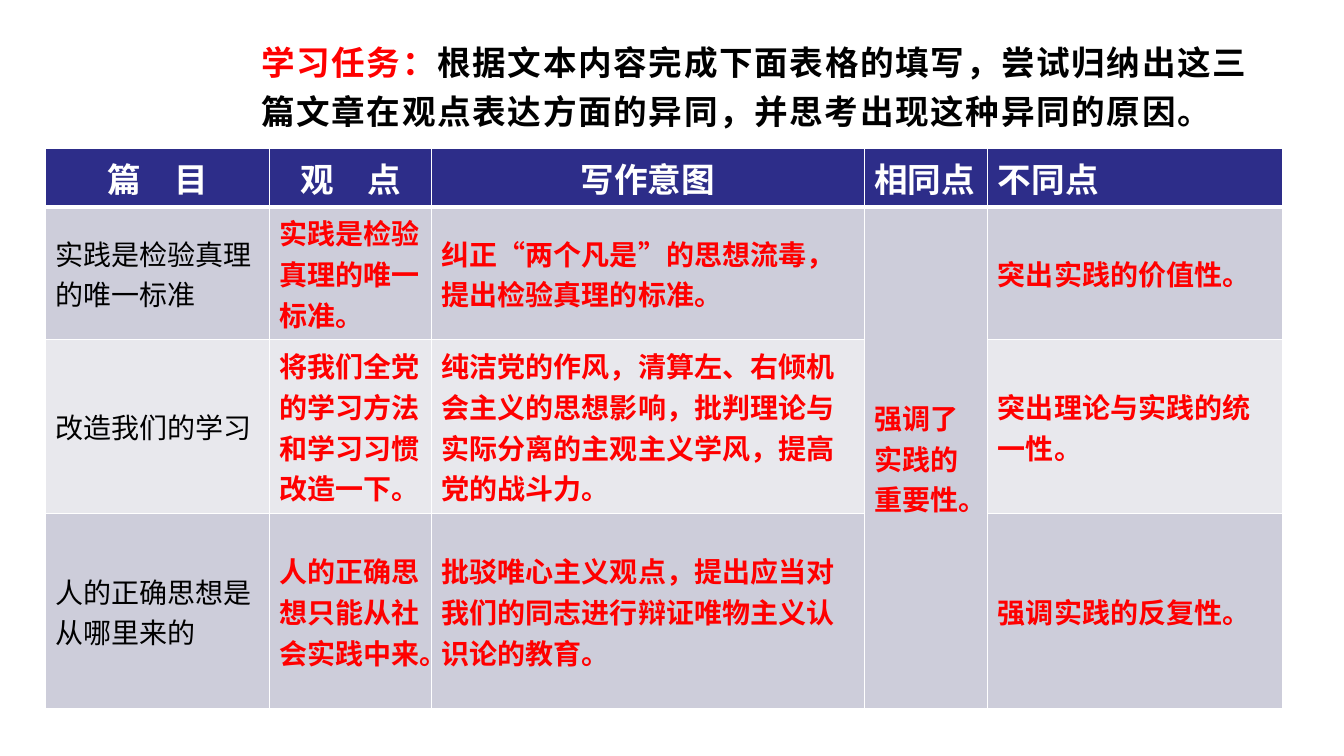
from lxml import etree
from pptx import Presentation
from pptx.dml.color import RGBColor
from pptx.enum.text import MSO_ANCHOR, MSO_AUTO_SIZE, PP_ALIGN
from pptx.oxml.ns import qn
from pptx.util import Cm, Pt

LEFT, CENTER = PP_ALIGN.LEFT, PP_ALIGN.CENTER
TOP, MIDDLE = MSO_ANCHOR.TOP, MSO_ANCHOR.MIDDLE
FIT_SHAPE = MSO_AUTO_SIZE.SHAPE_TO_FIT_TEXT
LATIN, HAN = "Arial", "Noto Sans CJK SC"
RED, BLACK, WHITE, NAVY = "FF0000", "000000", "FFFFFF", "2D2D89"
BANDS = ("CDCDDA", "E8E8ED")

COLUMN_WIDTHS = (5.64, 4.09, 10.9, 3.12, 7.44)
ROW_HEIGHTS = (1.46, 3.33, 4.39, 4.92)
BODY_FONTS = (LATIN, HAN, LATIN, LATIN, HAN)
HEADINGS = (
    ("篇　目", CENTER, LATIN),
    ("观　点", CENTER, LATIN),
    ("写作意图", CENTER, LATIN),
    ("相同点", LEFT, HAN),
    ("不同点", LEFT, LATIN),
)
ESSAYS = (
    ("实践是检验真理的唯一标准", "实践是检验真理的唯一标准。",
     "纠正“两个凡是”的思想流毒，提出检验真理的标准。",
     "强调了实践的重要性。", "突出实践的价值性。"),
    ("改造我们的学习", "将我们全党的学习方法和学习习惯改造一下。",
     "纯洁党的作风，清算左、右倾机会主义的思想影响，批判理论与实际分离的主观主义学风，提高党的战斗力。",
     "", "突出理论与实践的统一性。"),
    ("人的正确思想是从哪里来的", "人的正确思想只能从社会实践中来。",
     "批驳唯心主义观点，提出应当对我们的同志进行辩证唯物主义认识论的教育。",
     "", "强调实践的反复性。"),
)
TASK = (
    ("学习任务：", RED),
    ("根据文本内容完成下面表格的填写，尝试归纳出这三篇文章在观点表达方面的异同，并思考出现这种异同的原因。", BLACK),
)


def rgb(value):
    """Turn a hex string into a colour."""
    return RGBColor.from_string(value)


def add_run(paragraph, text, color, spacing=None, **style):
    """Append a Chinese run with the given font values."""
    run = paragraph.add_run()
    run.text = text
    for attribute, value in style.items():
        setattr(run.font, attribute, value)
    run.font.color.rgb = rgb(color)
    properties = run.font._element
    properties.set("lang", "zh-CN")
    if spacing:
        properties.set("spc", str(spacing))
    etree.SubElement(properties, qn("a:ea")).set("typeface", HAN)


def add_borders(cell, bottom_width):
    """Draw white lines around a cell."""
    properties = cell._tc.get_or_add_tcPr()
    for side, width in (("L", 1), ("R", 1), ("T", 1), ("B", bottom_width)):
        line = etree.SubElement(properties, qn(f"a:ln{side}"), w=str(Pt(width)))
        fill = etree.SubElement(line, qn("a:solidFill"))
        etree.SubElement(fill, qn("a:srgbClr"), val=WHITE)


def fill_cell(cell, text, fill, anchor, align, color, bottom_width=1, **style):
    """Give a cell its borders, fill and text."""
    add_borders(cell, bottom_width)
    cell.fill.solid()
    cell.fill.fore_color.rgb = rgb(fill)
    cell.vertical_anchor = anchor
    paragraph = cell.text_frame.paragraphs[0]
    paragraph.alignment = align
    if text:
        add_run(paragraph, text, color, **style)


def add_task(slide, left, top, width, height):
    """Place the learning task above the table."""
    frame = slide.shapes.add_textbox(left, top, width, height).text_frame
    frame.word_wrap = True
    frame.auto_size = FIT_SHAPE
    paragraph = frame.paragraphs[0]
    layout = {"line_spacing": 1.2, "space_after": Pt(8)}
    for attribute, value in layout.items():
        setattr(paragraph, attribute, value)
    for text, color in TASK:
        add_run(paragraph, text, color, spacing=120, name=HAN, size=Pt(24), bold=True)


def add_comparison(slide, left, top, width, height):
    """Place the table that compares the three essays."""
    table = slide.shapes.add_table(
        len(ROW_HEIGHTS), len(COLUMN_WIDTHS), left, top, width, height).table
    for column, share in zip(table.columns, COLUMN_WIDTHS):
        column.width = int(width * share / sum(COLUMN_WIDTHS))
    for row, share in zip(table.rows, ROW_HEIGHTS):
        row.height = int(height * share / sum(ROW_HEIGHTS))
    for index, (heading, align, font) in enumerate(HEADINGS):
        fill_cell(table.cell(0, index), heading, NAVY, TOP, align, WHITE,
                  bottom_width=3, name=font, size=Pt(24), bold=True)
    for row, essay in enumerate(ESSAYS, 1):
        for index, (text, font) in enumerate(zip(essay, BODY_FONTS)):
            is_title = index == 0
            fill_cell(table.cell(row, index), text, BANDS[(row - 1) % 2], MIDDLE, LEFT,
                      BLACK if is_title else RED,
                      name=font, size=Pt(20), bold=not is_title)
    table.cell(1, 3).merge(table.cell(len(ESSAYS), 3))


def main():
    """Build and save the slide."""
    deck = Presentation()
    deck.slide_width, deck.slide_height = Cm(33.87), Cm(19.05)
    slide = deck.slides.add_slide(deck.slide_layouts[6])
    add_comparison(slide, Cm(1.15), Cm(3.74), Cm(sum(COLUMN_WIDTHS)), Cm(sum(ROW_HEIGHTS)))
    add_task(slide, Cm(6.33), Cm(0.74), Cm(26), Cm(2.57))
    deck.save("out.pptx")


if __name__ == "__main__":
    main()
